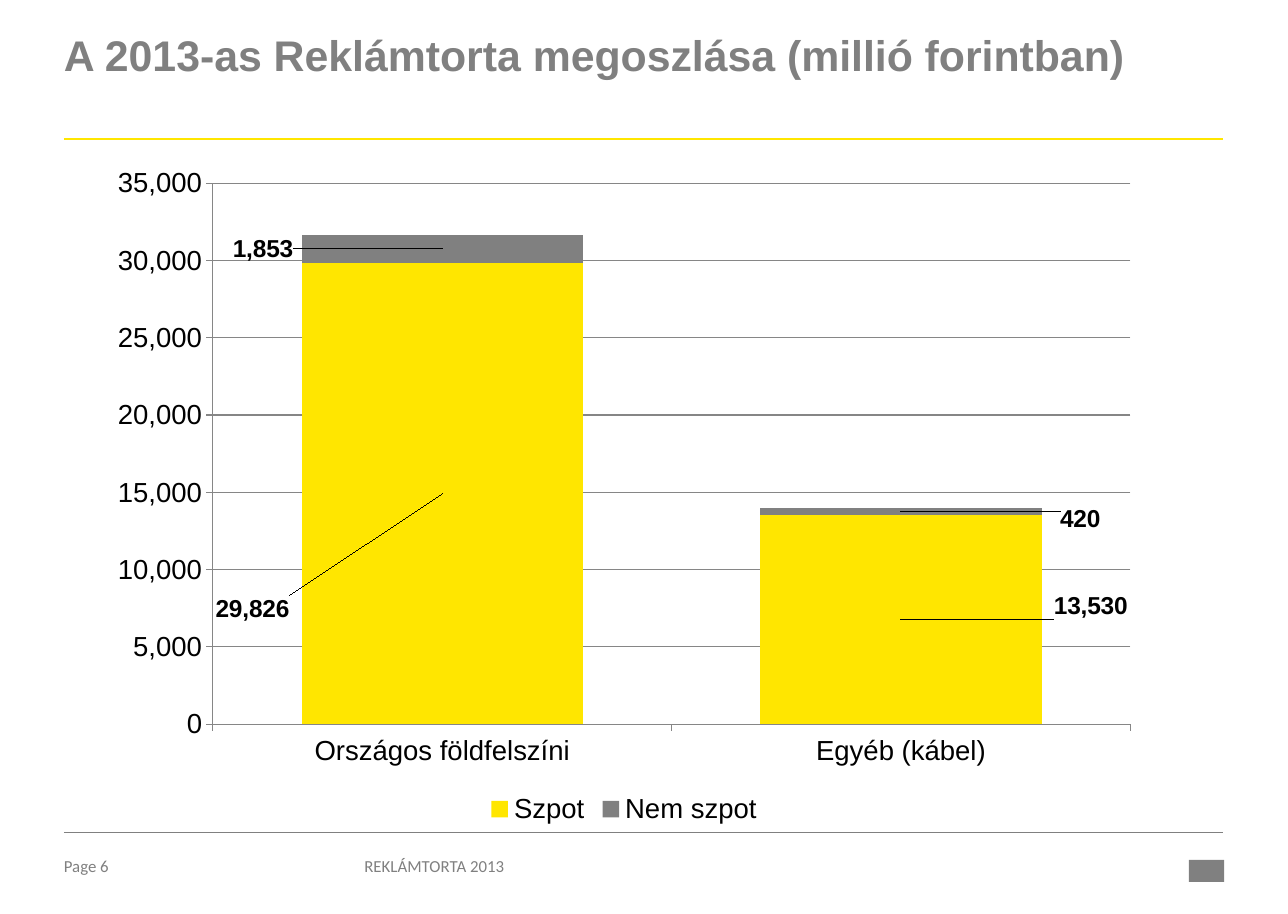
from pptx import Presentation
from pptx.chart.data import CategoryChartData as ChartData
from pptx.dml.color import RGBColor as RGB
from pptx.enum.chart import XL_CHART_TYPE as Kind, XL_LEGEND_POSITION as Place
from pptx.enum.chart import XL_TICK_MARK as Tick
from pptx.enum.shapes import MSO_CONNECTOR as Conn, MSO_SHAPE as Shape
from pptx.enum.text import MSO_ANCHOR as Anchor
from pptx.oxml import parse_xml
from pptx.oxml.ns import nsdecls, qn
from pptx.util import Inches, Pt

GRAY = RGB(0x80, 0x80, 0x80)
AXIS = RGB(0x86, 0x86, 0x86)
YELLOW = RGB(0xFF, 0xE6, 0x00)
BLACK = RGB(0, 0, 0)

# Grid of 117 columns by 83 rows
COLS, ROWS = 117, 83
LEFT, RIGHT = 5.8, 111.1

CATS = ["Országos földfelszíni", "Egyéb (kábel)"]
# Name, colour, values, label shifts as shares of the chart
SERIES = [
    ("Szpot", YELLOW, (29826, 13530), ((-0.18, 0.17), (0.18, -0.02))),
    ("Nem szpot", GRAY, (1853, 420), ((-0.17, 0), (0.17, 0.01))),
]


def style(item, **vals):
    for key, val in vals.items():
        if key == "color":
            item.color.rgb = val
        else:
            setattr(item, key, val)


def layout(tail, x, y, w=None, h=None):
    """Manual chart layout; with a size it sets the inner plot area."""
    parts = []
    if w:
        parts = [("layoutTarget", "inner"), ("xMode", "edge"), ("yMode", "edge")]
    parts += [("x", x), ("y", y)]
    if w:
        parts += [("w", w), ("h", h)]
    body = "".join(f'<c:{tag} val="{val}"/>' for tag, val in parts)
    for old in tail.findall(qn("c:layout")):
        tail.remove(old)
    return parse_xml(f'<c:layout {nsdecls("c")}><c:manualLayout>{body}'
                     '</c:manualLayout></c:layout>')


class Deck:
    def __init__(self):
        self.prs = Presentation()
        self.prs.slide_width, self.prs.slide_height = Inches(11.7), Inches(8.3)
        self.slide = self.prs.slides.add_slide(self.prs.slide_layouts[6])
        self.shapes = self.slide.shapes

    def x(self, cols):
        return round(self.prs.slide_width * cols / COLS)

    def y(self, rows):
        return round(self.prs.slide_height * rows / ROWS)

    def box(self, left, top, wide, high):
        return self.x(left), self.y(top), self.x(wide), self.y(high)

    def text(self, words, at, space=1.0, **font):
        frame = self.shapes.add_textbox(*self.box(*at)).text_frame
        style(frame, word_wrap=True, vertical_anchor=Anchor.TOP, margin_left=0,
              margin_right=0, margin_top=0, margin_bottom=0)
        para = frame.paragraphs[0]
        para.line_spacing = space
        run = para.add_run()
        run.text = words
        style(run.font, **font)

    def rule(self, row, color, width):
        line = self.shapes.add_connector(Conn.STRAIGHT, self.x(LEFT), self.y(row),
                                         self.x(RIGHT), self.y(row))
        style(line.line, color=color, width=Pt(width))
        line._element.spPr.append(parse_xml(f'<a:effectLst {nsdecls("a")}/>'))

    def block(self, at, color):
        shape = self.shapes.add_shape(Shape.RECTANGLE, *self.box(*at))
        shape.shadow.inherit = False
        shape.fill.solid()
        shape.fill.fore_color.rgb = color
        shape.line.fill.background()

    def chart(self, at):
        data = ChartData(number_format="#,##0")
        data.categories = CATS
        for name, _, vals, _ in SERIES:
            data.add_series(name, vals)
        chart = self.shapes.add_chart(Kind.COLUMN_STACKED, *self.box(*at), data).chart
        style(chart, has_title=False, has_legend=True)
        style(chart.font, name="Arial", size=Pt(18), color=BLACK)
        style(chart.legend, position=Place.BOTTOM, include_in_layout=False)
        area = chart._chartSpace.chart.plotArea
        area.insert(0, layout(area, 0.11, 0.043, 0.87, 0.80))

        # Axes
        axis = chart.value_axis
        style(axis, minimum_scale=0, maximum_scale=35000, major_unit=5000,
              has_major_gridlines=True)
        style(axis.tick_labels, number_format="#,##0", number_format_is_linked=False)
        for each in (axis, chart.category_axis):
            style(each, major_tick_mark=Tick.OUTSIDE, minor_tick_mark=Tick.NONE)
            style(each.format.line, color=AXIS, width=Pt(0.75))
        style(axis.major_gridlines.format.line, color=AXIS, width=Pt(0.75))

        # Bars and their labels
        plot = chart.plots[0]
        style(plot, gap_width=63, overlap=100, vary_by_categories=False)
        for bars, (_, color, _, shifts) in zip(plot.series, SERIES):
            bars.format.fill.solid()
            bars.format.fill.fore_color.rgb = color
            style(bars.data_labels, show_value=True, number_format="#,##0",
                  number_format_is_linked=False)
            bold = dict(name="Arial", size=Pt(16), bold=True, color=BLACK)
            style(bars.data_labels.font, **bold)
            for num in range(len(shifts)):
                style(bars.points[num].data_label.font, **bold)
            for tag, shift in zip(bars._element.iter(qn("c:dLbl")), shifts):
                tag.insert(1, layout(tag, *shift))


def main():
    deck = Deck()
    # Title
    deck.text("A 2013-as Reklámtorta megoszlása (millió forintban)",
              (LEFT, 3.3, RIGHT - LEFT, 9.4), 0.85,
              name="Arial", size=Pt(28), bold=True, color=GRAY)
    deck.rule(12.6, YELLOW, 1.5)
    # Chart
    deck.chart((8.8, 14, 95.8, 61.4))
    # Footer
    deck.rule(75.6, GRAY, 0.25)
    for words, left, wide in (("Page 6", LEFT, 8.5), ("REKLÁMTORTA 2013", 33.1, 43.9)):
        deck.text(words, (left, 77.7, wide, 2.4),
                  name="Calibri", size=Pt(11), color=GRAY)
    deck.block((108, 78.1, 3.2, 2), GRAY)
    deck.prs.save("out.pptx")


if __name__ == "__main__":
    main()
